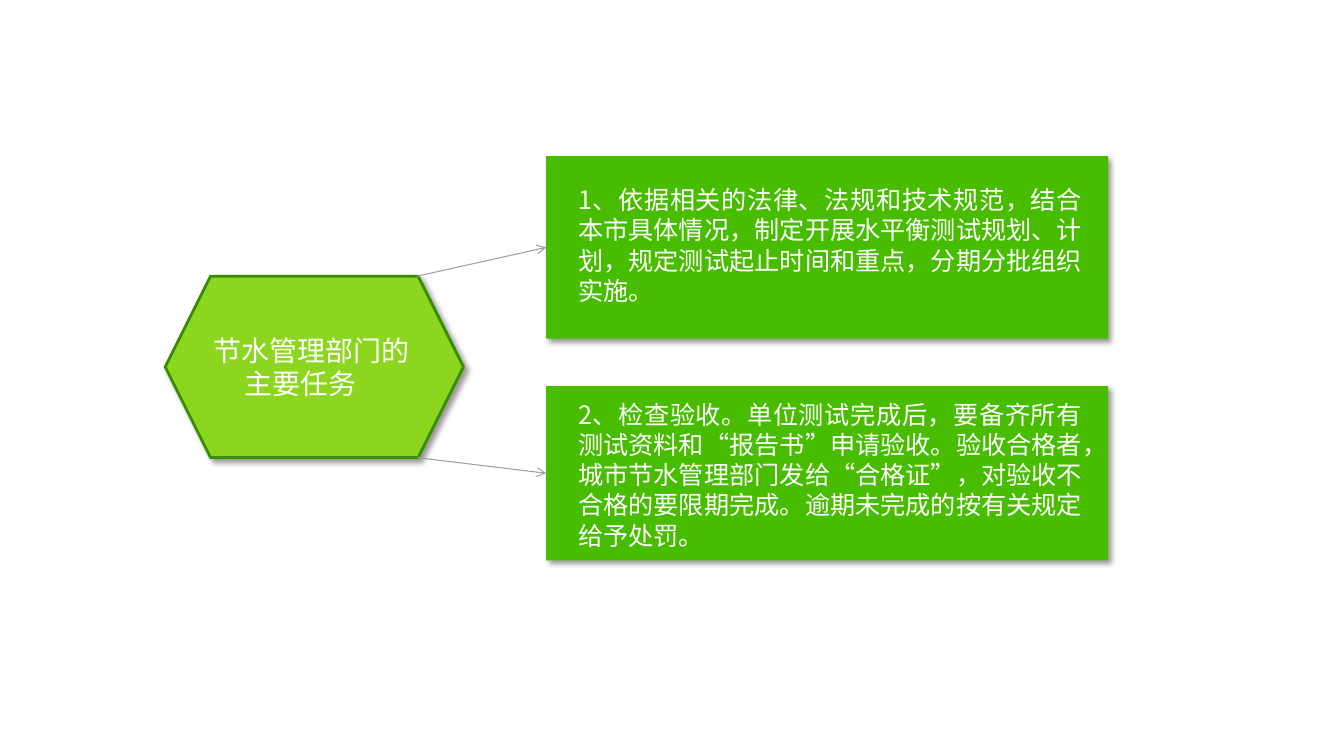
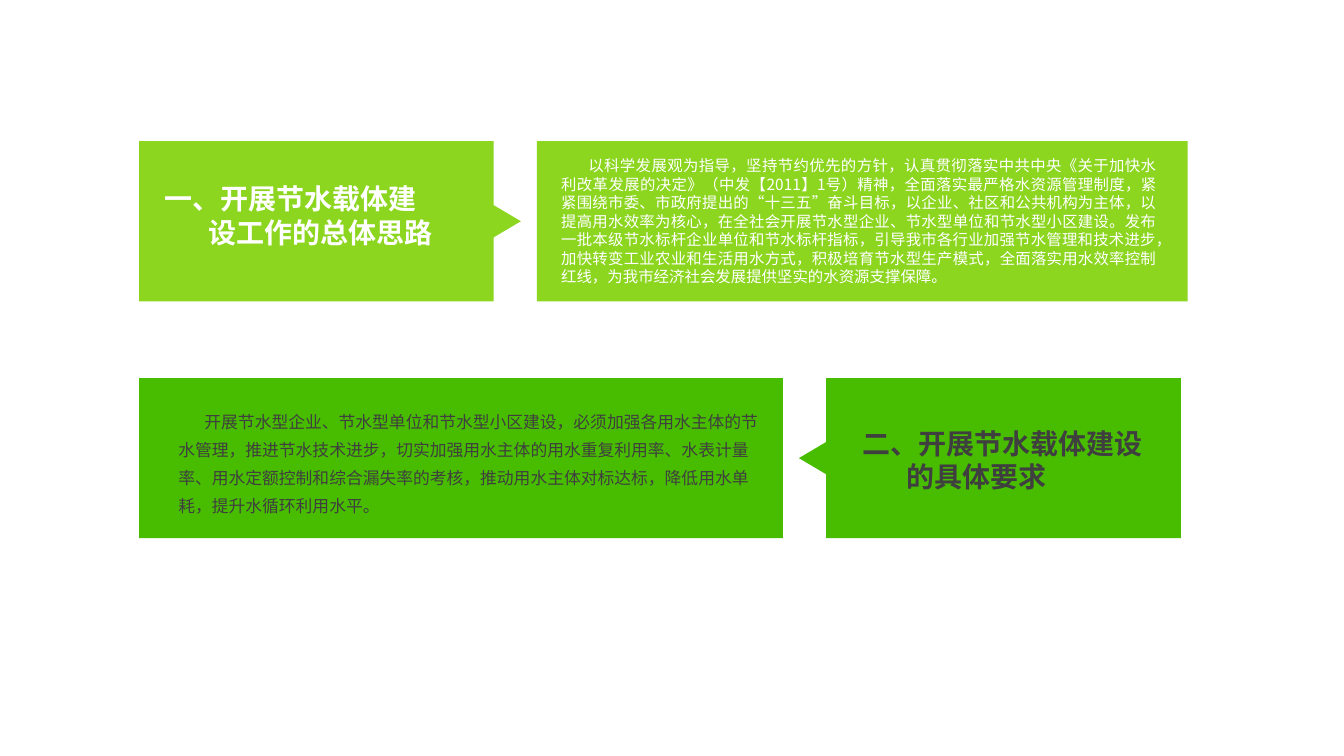
from collections import namedtuple
from dataclasses import dataclass

import lxml.etree
import pptx
import pptx.dml.color
import pptx.enum.lang
import pptx.enum.shapes
import pptx.enum.text
import pptx.oxml
import pptx.oxml.ns
import pptx.util

Inches = pptx.util.Inches
Pt = pptx.util.Pt
qn = pptx.oxml.ns.qn
SHAPES = pptx.enum.shapes.MSO_SHAPE
ALIGN = pptx.enum.text.PP_ALIGN

Box = namedtuple("Box", "left top width height")
Line = namedtuple("Line", "text margin first_line", defaults=(0, 0))
Style = namedtuple("Style", "size color bold align spacing",
                   defaults=(False, ALIGN.LEFT, None))


@dataclass(frozen=True)
class Theme:
    font: str = "Noto Sans CJK SC"
    lime: str = "8CD620"
    green: str = "48BD00"
    outline: str = "368E00"
    connector: str = "9F9F9F"
    light_text: str = "FFFFFF"
    dark_text: str = "3F3F3F"
    heading_size: int = 20
    card_size: int = 18
    body_size: int = 12
    small_size: int = 11


THEME = Theme()
SHADOW = (
    '<a:effectLst xmlns:a="http://schemas.openxmlformats.org/drawingml/2006/main">'
    '<a:outerShdw blurRad="50800" dist="38100" dir="2700000" algn="tl" rotWithShape="0">'
    '<a:srgbClr val="000000"><a:alpha val="40000"/></a:srgbClr>'
    '</a:outerShdw></a:effectLst>'
)


def rgb(color):
    return pptx.dml.color.RGBColor.from_string(color)


def inches(box):
    return [Inches(length) for length in box]


def paint(shape, color, outline=None, shadow=False):
    shape.shadow.inherit = False
    shape.fill.solid()
    shape.fill.fore_color.rgb = rgb(color)
    if outline:
        shape.line.color.rgb = rgb(outline)
        shape.line.width = Pt(2)
    else:
        shape.line.fill.background()
    if shadow:
        properties = shape._element.spPr
        properties.replace(properties.find(qn("a:effectLst")),
                           pptx.oxml.parse_xml(SHADOW))


def add_panel(slide, box, color, kind=SHAPES.RECTANGLE, outline=None, shadow=False):
    shape = slide.shapes.add_shape(kind, *inches(box))
    paint(shape, color, outline, shadow)
    return shape


def write(frame, lines, style, insets=(0, 0)):
    """Fill a text frame; insets are the horizontal and vertical margins."""
    frame.word_wrap = True
    frame.margin_left = frame.margin_right = Inches(insets[0])
    frame.margin_top = frame.margin_bottom = Inches(insets[1])
    for number, line in enumerate(lines):
        paragraph = frame.paragraphs[0] if number == 0 else frame.add_paragraph()
        paragraph.alignment = style.align
        if style.spacing:
            paragraph.line_spacing = Pt(style.spacing)
        properties = paragraph._p.get_or_add_pPr()
        properties.set("marL", str(Inches(line.margin)))
        properties.set("indent", str(Inches(line.first_line)))
        run = paragraph.add_run()
        run.text = line.text
        font = run.font
        font.size = Pt(style.size)
        font.bold = style.bold
        font.color.rgb = rgb(style.color)
        font.name = THEME.font
        font.language_id = pptx.enum.lang.MSO_LANGUAGE_ID.SIMPLIFIED_CHINESE
        east_asian = lxml.etree.SubElement(run._r.get_or_add_rPr(), qn("a:ea"))
        east_asian.set("typeface", THEME.font)


def add_text(slide, box, lines, style, insets=(0, 0)):
    frame = slide.shapes.add_textbox(*inches(box)).text_frame
    write(frame, lines, style, insets)
    frame.auto_size = pptx.enum.text.MSO_AUTO_SIZE.SHAPE_TO_FIT_TEXT


def add_arrow(slide, start, end):
    connector = slide.shapes.add_connector(
        pptx.enum.shapes.MSO_CONNECTOR.STRAIGHT, *inches(start + end))
    connector.line.color.rgb = rgb(THEME.connector)
    connector.line.width = Pt(0.75)
    lxml.etree.SubElement(connector.line._get_or_add_ln(), qn("a:tailEnd")).set("type", "arrow")
    lxml.etree.SubElement(connector._element.spPr, qn("a:effectLst"))


def add_topic(slide, box):
    shape = add_panel(slide, box, THEME.lime, SHAPES.HEXAGON, THEME.outline, shadow=True)
    shape.text_frame.vertical_anchor = pptx.enum.text.MSO_ANCHOR.MIDDLE
    write(shape.text_frame, [Line("节水管理部门的"), Line("主要任务", margin=0.31)],
          Style(THEME.heading_size, THEME.light_text), (0.08, 0.04))


def add_task_card(slide, box, text, text_offset, text_height):
    add_panel(slide, box, THEME.green, shadow=True)
    text_box = Box(box.left + 0.22, box.top + text_offset, 5.2, text_height)
    add_text(slide, text_box, [Line(text)],
             Style(THEME.card_size, THEME.light_text, align=ALIGN.JUSTIFY), (0.1, 0.05))


def add_callout(slide, box, color, direction):
    """Box with a pointer on its right (direction 1) or left (direction -1)."""
    far = box.left if direction > 0 else box.left + box.width
    near = far + direction * box.width
    bottom = box.top + box.height
    middle = box.top + box.height / 2
    outline = [(far, box.top), (near, box.top), (near, middle - 0.16),
               (near + direction * 0.27, middle), (near, middle + 0.16),
               (near, bottom), (far, bottom)]
    points = [tuple(inches(point)) for point in outline]
    builder = slide.shapes.build_freeform(*points[0])
    builder.add_line_segments(points[1:], close=True)
    paint(builder.convert_to_shape(), color)


def add_heading(slide, left, top, first, second, color):
    add_text(slide, Box(left, top, 3.46, 0.67),
             [Line(first), Line(second, margin=0.44)],
             Style(THEME.heading_size, color, bold=True))


def build_tasks(slide):
    topic = Box(1.64, 2.74, 2.96, 1.8)
    cards = [
        (Box(5.42, 1.55, 5.58, 1.81),
         "1、依据相关的法律、法规和技术规范，结合本市具体情况，制定开展水平衡测试规划、计划，"
         "规定测试起止时间和重点，分期分批组织实施。", 0.23, 1.31),
        (Box(5.42, 3.83, 5.58, 1.73),
         "2、检查验收。单位测试完成后，要备齐所有测试资料和“报告书”申请验收。验收合格者，"
         "城市节水管理部门发给“合格证”，对验收不合格的要限期完成。逾期未完成的按有关规定给予处罚。",
         0.08, 1.62),
    ]
    add_topic(slide, topic)
    corner = topic.left + topic.width - 0.46
    for (box, text, offset, height), edge in zip(cards, (topic.top, topic.top + topic.height)):
        add_arrow(slide, (corner, edge), (box.left, box.top + box.height / 2))
        add_task_card(slide, box, text, offset, height)


def build_outline(slide):
    left, gap, callout_width, row_height = 1.38, 0.43, 3.52, 1.59

    top = 1.4
    panel = Box(left + callout_width + gap, top, 6.46, row_height)
    add_panel(slide, panel, THEME.lime)
    add_callout(slide, Box(left, top, callout_width, row_height), THEME.lime, 1)
    add_text(slide, Box(panel.left + 0.24, top + 0.15, 5.91, 1.3), [Line(
        "以科学发展观为指导，坚持节约优先的方针，认真贯彻落实中共中央《关于加快水利改革发展的决定》"
        "（中发【2011】1号）精神，全面落实最严格水资源管理制度，紧紧围绕市委、市政府提出的“十三五”"
        "奋斗目标，以企业、社区和公共机构为主体，以提高用水效率为核心，在全社会开展节水型企业、"
        "节水型单位和节水型小区建设。发布一批本级节水标杆企业单位和节水标杆指标，引导我市各行业加强"
        "节水管理和技术进步，加快转变工业农业和生活用水方式，积极培育节水型生产模式，全面落实用水效率"
        "控制红线，为我市经济社会发展提供坚实的水资源支撑保障。", first_line=0.27)],
        Style(THEME.small_size, THEME.light_text, align=ALIGN.JUSTIFY))
    add_heading(slide, left + 0.25, top + 0.4,
                "一、开展节水载体建", "设工作的总体思路", THEME.light_text)

    top = 3.75
    panel = Box(left, top, 6.39, row_height)
    callout = Box(left + panel.width + gap, top, callout_width, row_height)
    add_panel(slide, panel, THEME.green)
    add_callout(slide, callout, THEME.green, -1)
    add_text(slide, Box(left + 0.39, top + 0.26, 5.76, 1.09), [Line(
        "开展节水型企业、节水型单位和节水型小区建设，必须加强各用水主体的节水管理，推进节水技术进步，"
        "切实加强用水主体的用水重复利用率、水表计量率、用水定额控制和综合漏失率的考核，"
        "推动用水主体对标达标，降低用水单耗，提升水循环利用水平。", first_line=0.26)],
        Style(THEME.body_size, THEME.dark_text, spacing=20))
    add_heading(slide, callout.left + 0.36, top + 0.48,
                "二、开展节水载体建设", "的具体要求", THEME.dark_text)


def main():
    presentation = pptx.Presentation()
    presentation.slide_width = Inches(13.34)
    presentation.slide_height = Inches(7.5)
    for build in (build_tasks, build_outline):
        build(presentation.slides.add_slide(presentation.slide_layouts[6]))
    presentation.save("out.pptx")


if __name__ == "__main__":
    main()
